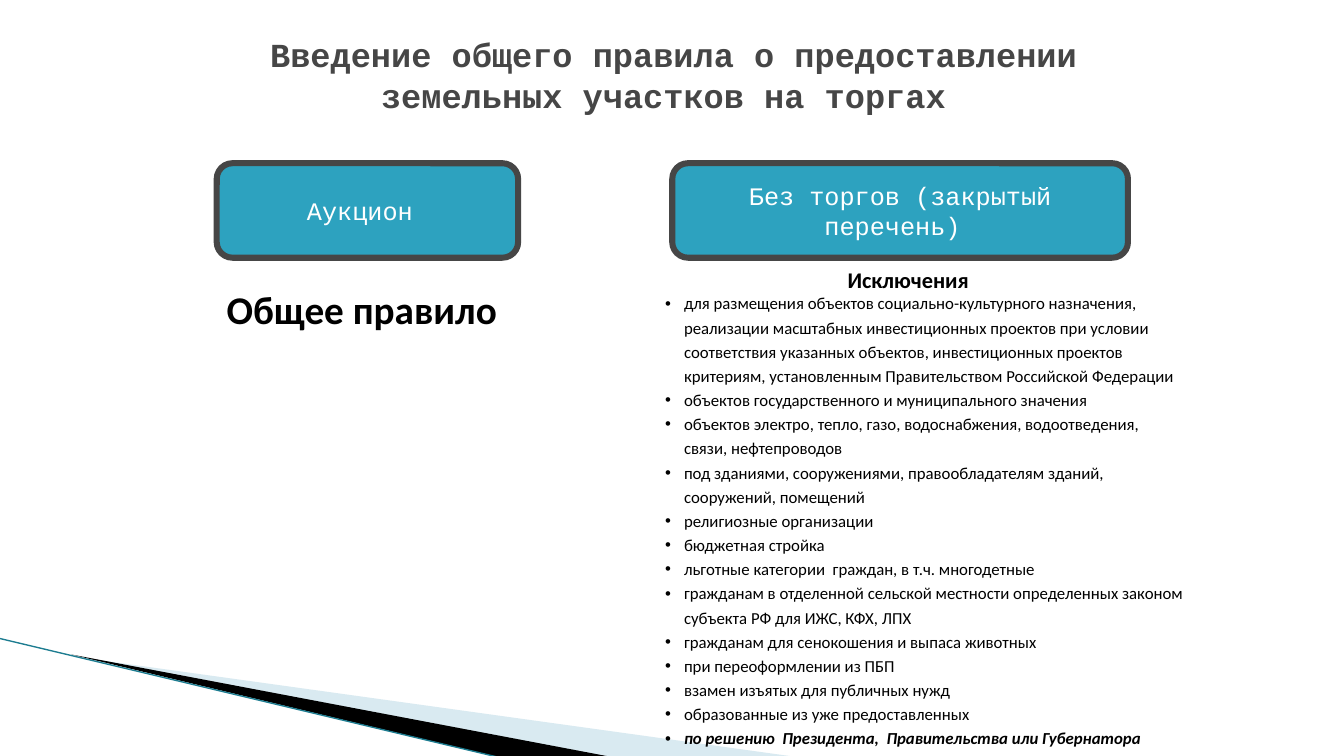
from pptx import Presentation
from pptx.dml.color import RGBColor
from pptx.enum.shapes import MSO_CONNECTOR as Conn, MSO_SHAPE as Shape
from pptx.enum.text import MSO_ANCHOR as Anchor, MSO_AUTO_SIZE as Auto, PP_ALIGN as Align
from pptx.oxml.ns import qn
from pptx.util import Pt
from lxml.etree import SubElement

MONO, SANS = "Courier New", "Calibri"
BLACK, WHITE, GREY, TEAL = "000000", "FFFFFF", "464646", "2DA2BF"

TITLE = ["Введение общего правила о предоставлении",
         "земельных участков на торгах "]
CASES = [
    "для размещения объектов социально-культурного назначения, реализации "
    "масштабных инвестиционных проектов при условии соответствия указанных "
    "объектов, инвестиционных проектов критериям, установленным "
    "Правительством Российской Федерации",
    "объектов государственного и муниципального значения",
    "объектов электро, тепло, газо, водоснабжения, водоотведения, связи, нефтепроводов",
    "под зданиями, сооружениями, правообладателям зданий, сооружений, помещений",
    "религиозные организации",
    "бюджетная стройка",
    "льготные категории  граждан, в т.ч. многодетные",
    "гражданам в отделенной сельской местности определенных законом "
    "субъекта РФ для ИЖС, КФХ, ЛПХ",
    "гражданам для сенокошения и выпаса животных",
    "при переоформлении из ПБП",
    "взамен изъятых для публичных нужд",
    "образованные из уже предоставленных",
    "по решению  Президента,  Правительства или Губернатора",
]


def paint(part, color):
    part.solid()
    part.fore_color.rgb = RGBColor.from_string(color)


def style(para, face, size, color, bold=False):
    font = para.font
    font.name, font.size, font.bold = face, Pt(size), bold
    font.color.rgb = RGBColor.from_string(color)


def bullet(para, indent):
    props = para._p.get_or_add_pPr()
    props.set("marL", str(Pt(indent)))
    props.set("indent", str(-Pt(indent)))
    SubElement(props, qn("a:buFont")).set("typeface", "Arial")
    SubElement(props, qn("a:buChar")).set("char", "•")


def label(slide, box, lines, face, size, color, align=Align.LEFT, bold=True, mark=0):
    frame = slide.shapes.add_textbox(*map(Pt, box)).text_frame
    frame.word_wrap = True
    frame.auto_size = Auto.SHAPE_TO_FIT_TEXT
    frame.text = "\n".join(lines)
    for para in frame.paragraphs:
        para.alignment = align
        if mark:
            para.line_spacing = 1.2
            bullet(para, mark)
        style(para, face, size, color, bold)
    return frame


def wedge(slide, points, color, alpha=None):
    start, *rest = [(Pt(x), Pt(y)) for x, y in points]
    pen = slide.shapes.build_freeform(*start)
    pen.add_line_segments(rest)
    shape = pen.convert_to_shape()
    shape.shadow.inherit = False
    paint(shape.fill, color)
    shape.line.fill.background()
    if alpha:
        tone = shape.fill._xPr.find(".//" + qn("a:srgbClr"))
        SubElement(tone, qn("a:alpha")).set("val", str(alpha * 1000))


def corner(slide, box):
    x, y, w, h = box
    # Pale and black wedges
    wedge(slide, [(x + 53, y + 13), (x + w, y + h), (x + 438, y + h)], "A0CBDC", 40)
    wedge(slide, [(x + 51.5, y + 11.5), (x + 439, y + h), (x + 357.5, y + h)], BLACK)
    # Thin edge
    edge = slide.shapes.add_connector(
        Conn.STRAIGHT, Pt(x), Pt(y), Pt(x + 357), Pt(y + h))
    paint(edge.line.fill, "1C7C90")
    edge.line.width = Pt(0.95)
    SubElement(edge._element.spPr, qn("a:effectLst"))


def plate(slide, box, text):
    shape = slide.shapes.add_shape(Shape.ROUNDED_RECTANGLE, *map(Pt, box))
    shape.shadow.inherit = False
    paint(shape.fill, TEAL)
    paint(shape.line.fill, GREY)
    shape.line.width = Pt(4.33)
    frame = shape.text_frame
    frame.word_wrap = True
    frame.vertical_anchor = Anchor.MIDDLE
    frame.text = text
    para = frame.paragraphs[0]
    para.alignment = Align.CENTER
    style(para, MONO, 18, WHITE)


def rule(slide, box):
    x, y, w, h = box
    plate(slide, (x, y, w, 67.5), "Аукцион ")
    label(slide, (x, y + 83.5, w, h - 83.5), ["Общее правило"], SANS, 28, BLACK)


def limits(slide, box):
    x, y, w, h = box
    plate(slide, (x + 12.2, y, 325.5, 67.5), "Без торгов (закрытый перечень) ")
    frame = label(slide, (x, y + 86.4, w, h - 86.4), CASES, SANS, 12, BLACK,
                  bold=False, mark=13.5)
    last = frame.paragraphs[-1].font
    last.bold = last.italic = True
    label(slide, (x + 130.3, y + 69.8, 102.5, 26.6), ["Исключения"], SANS, 16, BLACK)


def main():
    deck = Presentation()
    deck.slide_width, deck.slide_height = Pt(960), Pt(540)
    slide = deck.slides.add_slide(deck.slide_layouts[6])
    corner(slide, (-0.5, 456, 571.5, 85))
    label(slide, (124.5, 20.9, 713, 65.5), TITLE, MONO, 24, GREY, Align.CENTER)
    rule(slide, (154.8, 116.6, 215.3, 139))
    limits(slide, (468, 116.6, 385.2, 425.5))
    deck.save("out.pptx")


if __name__ == "__main__":
    main()
